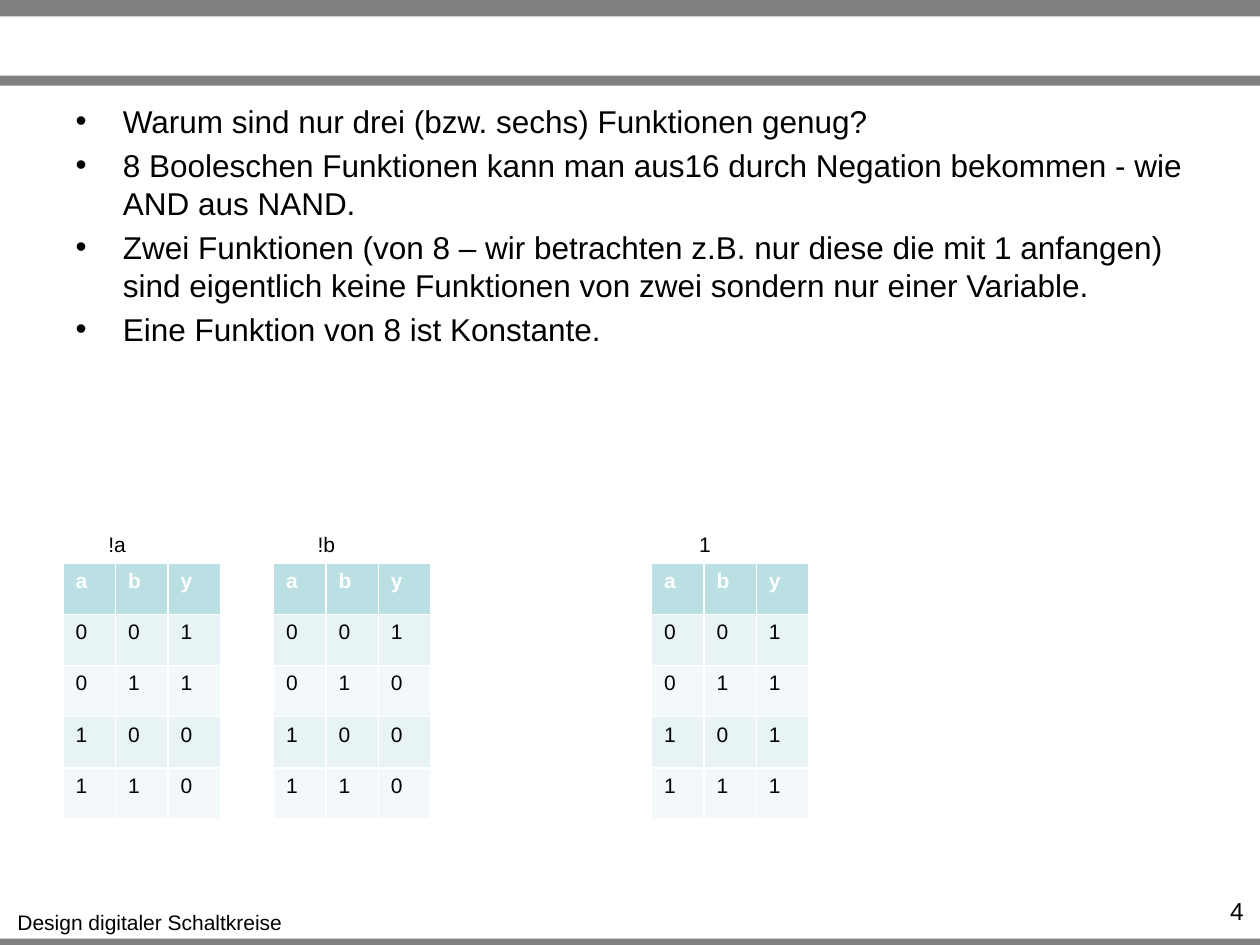
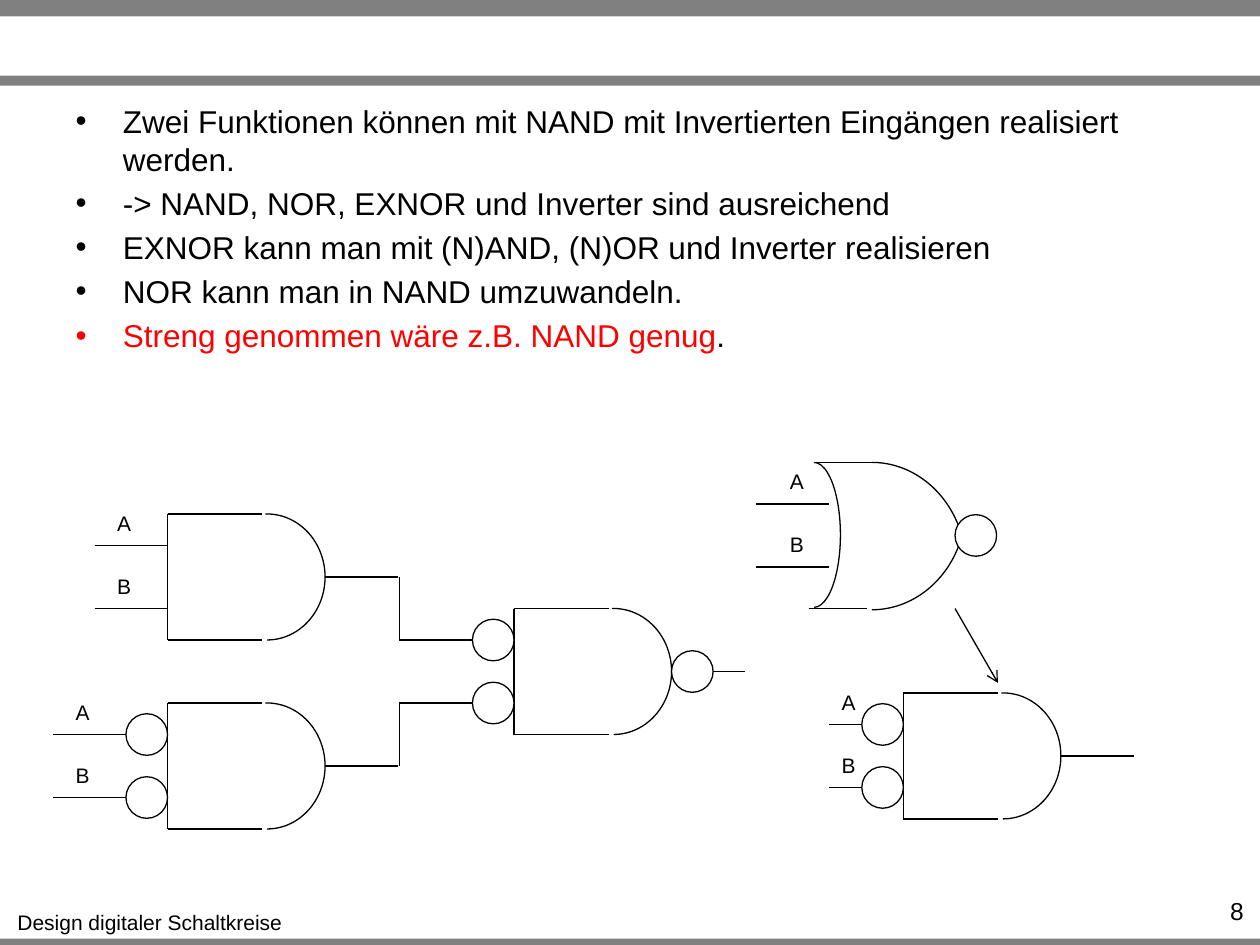
from lxml import etree
from pptx import Presentation
from pptx.dml.color import RGBColor
from pptx.enum.shapes import MSO_CONNECTOR, MSO_SHAPE
from pptx.enum.text import MSO_ANCHOR, MSO_AUTO_SIZE, PP_ALIGN
from pptx.oxml.ns import qn
from pptx.util import Inches, Pt

STRAIGHT = MSO_CONNECTOR.STRAIGHT
RECTANGLE, OVAL, ARC = MSO_SHAPE.RECTANGLE, MSO_SHAPE.OVAL, MSO_SHAPE.ARC
NO_FIT, FIT_SHAPE = MSO_AUTO_SIZE.NONE, MSO_AUTO_SIZE.SHAPE_TO_FIT_TEXT
CENTER, RIGHT = PP_ALIGN.CENTER, PP_ALIGN.RIGHT
TOP = MSO_ANCHOR.TOP

BLACK = RGBColor(0x00, 0x00, 0x00)
WHITE = RGBColor(0xFF, 0xFF, 0xFF)
GRAY = RGBColor(0x80, 0x80, 0x80)
RED = RGBColor(0xFF, 0x00, 0x00)
HEADER_FILL = RGBColor(0xBB, 0xE0, 0xE3)
ROW_FILLS = [RGBColor(0xF3, 0xF9, 0xFA), RGBColor(0xE7, 0xF3, 0xF4)]
FONT = "Arial"

# Content shared by the slides
FOOTER = "Design digitaler Schaltkreise"
BANDS = [(7.45, 0.08), (0, 0.13), (0.6, 0.08)]  # top, height

# Slide with truth tables; each bullet is a list of (text, colour) runs
TABLE_BULLETS = [
    [("Warum sind nur drei (bzw. sechs) Funktionen genug?", BLACK)],
    [("8 Booleschen Funktionen kann man aus16 durch Negation bekommen"
      " - wie AND aus NAND.", BLACK)],
    [("Zwei Funktionen (von 8 – wir betrachten z.B. nur diese die mit 1 "
      "anfangen) sind eigentlich keine Funktionen von zwei sondern nur "
      "einer Variable.", BLACK)],
    [("Eine Funktion von 8 ist Konstante.", BLACK)],
]
INPUTS = ["00", "01", "10", "11"]
# function, outputs y, table left, label left, label width
TRUTH_TABLES = [
    ("!a", "1100", 0.5, 0.76, 0.34),
    ("!b", "1000", 2.17, 2.42, 0.34),
    ("1", "1111", 5.17, 5.45, 0.29),
]

# Slide with gates
GATE_BULLETS = [
    [("Zwei Funktionen können mit NAND mit Invertierten Eingängen "
      "realisiert werden.", BLACK)],
    [("-> NAND, NOR, EXNOR und Inverter sind ausreichend", BLACK)],
    [("EXNOR kann man mit (N)AND, (N)OR und Inverter realisieren", BLACK)],
    [("NOR kann man in NAND umzuwandeln.", BLACK)],
    [("Streng genommen wäre z.B. NAND genug", RED), (".", BLACK)],
]
# left, top, start of input wires, left of A/B labels, inverted inputs, inverted output
AND_GATES = [
    (1.33, 4.08, 0.75, 0.83, False, False),
    (1.33, 5.58, 0.42, 0.5, True, False),
    (7.17, 5.5, 6.58, 6.58, True, False),
    (4.08, 4.83, 3.17, None, True, True),
]
LINKS = [(3.17, 4.58, 5.08), (3.17, 5.58, 6.08)]  # x, from y, to y
BUBBLE = 0.33
WIRE = 0.58


def add_text(slide, text, left, top, width, height, size=12, align=CENTER):
    box = slide.shapes.add_textbox(
        Inches(left), Inches(top), Inches(width), Inches(height))
    frame = box.text_frame
    frame.text = text
    frame.word_wrap = align == RIGHT
    frame.auto_size = NO_FIT if frame.word_wrap else FIT_SHAPE
    paragraph = frame.paragraphs[0]
    paragraph.alignment = align
    paragraph.font.name = FONT
    paragraph.font.size = Pt(size)
    paragraph.font.color.rgb = BLACK
    return box


def add_master_parts(prs, slide):
    """Build the bands and footer once and move them to the slide master."""
    parts = []
    for top, height in BANDS:
        band = slide.shapes.add_shape(
            RECTANGLE, 0, Inches(top), prs.slide_width, Inches(height))
        band.shadow.inherit = False
        band.fill.solid()
        band.fill.fore_color.rgb = GRAY
        band.line.fill.background()
        parts.append(band)
    parts.append(add_text(slide, FOOTER, 0.03, 7.17, 2.32, 0.3))
    for part in parts:
        prs.slide_master.shapes.element.append(part.element)


def add_slide(prs, bullets, number):
    slide = prs.slides.add_slide(prs.slide_layouts[1])
    title = slide.shapes.title.element
    title.getparent().remove(title)
    body = slide.placeholders[1]
    body.left, body.top = Inches(0.5), Inches(0.76)
    body.width, body.height = Inches(9), Inches(2.49)
    frame = body.text_frame
    frame.auto_size = NO_FIT
    for index, runs in enumerate(bullets):
        paragraph = frame.add_paragraph() if index else frame.paragraphs[0]
        if index == 0:
            paragraph.space_before = Pt(0)
        paragraph.font.name = FONT
        paragraph.font.size = Pt(18)
        for text, color in runs:
            run = paragraph.add_run()
            run.text = text
            run.font.color.rgb = color
    add_text(slide, number, 9.1, 7.06, 0.87, 0.24, 14, RIGHT)
    return slide


def add_truth_table(slide, function, outputs, left, label_left, label_width):
    rows = ["aby"] + [pair + y for pair, y in zip(INPUTS, outputs)]
    table = slide.shapes.add_table(
        len(rows), 3, Inches(left), Inches(4.47), Inches(1.25), Inches(2.03)).table
    for r, values in enumerate(rows):
        for c, value in enumerate(values):
            cell = table.cell(r, c)
            cell.text = value
            cell.vertical_anchor = TOP
            cell.fill.solid()
            cell.fill.fore_color.rgb = ROW_FILLS[r % 2] if r else HEADER_FILL
            font = cell.text_frame.paragraphs[0].font
            font.name, font.size, font.bold = FONT, Pt(12), r == 0
            font.color.rgb = BLACK if r else WHITE
    add_text(slide, function, label_left, 4.17, label_width, 0.3)


def add_line(slide, x1, y1, x2, y2, arrow=False):
    line = slide.shapes.add_connector(
        STRAIGHT, Inches(x1), Inches(y1), Inches(x2), Inches(y2))
    line.line.color.rgb = BLACK
    line.line.width = Pt(0.75)
    properties = line.element.spPr
    if arrow:
        etree.SubElement(properties.find(qn("a:ln")), qn("a:tailEnd"), type="arrow")
    etree.SubElement(properties, qn("a:effectLst"))


def add_outline(slide, kind, left, top, width, height):
    outline = slide.shapes.add_shape(
        kind, Inches(left), Inches(top), Inches(width), Inches(height))
    outline.shadow.inherit = False
    outline.line.color.rgb = BLACK
    outline.line.width = Pt(0.75)
    return outline


def add_arc(slide, left, top, width, height, end, flip=False):
    """Draw an arc from twelve o'clock to the angle end, in degrees."""
    arc = add_outline(slide, ARC, left, top, width, height)
    arc.fill.background()
    arc.adjustments[0] = 270 * 0.6
    arc.adjustments[1] = end * 0.6
    if flip:
        arc.element.spPr.find(qn("a:xfrm")).set("flipV", "1")


def add_bubble(slide, left, middle):
    bubble = add_outline(slide, OVAL, left, middle - BUBBLE / 2, BUBBLE, BUBBLE)
    bubble.fill.solid()
    bubble.fill.fore_color.rgb = WHITE


def add_inputs(slide, start, end, first, label_left, inverted=False):
    for name, y in (("A", first), ("B", first + 0.5)):
        add_line(slide, start, y, end, y)
        if inverted:
            add_bubble(slide, end - BUBBLE, y)
        if label_left is not None:
            add_text(slide, name, label_left, y - 0.33, 0.31, 0.3)


def add_and_gate(slide, left, top, wire_start, label_left, inverted_in, inverted_out):
    add_line(slide, left, top, left, top + 1)
    for y in (top, top + 1):
        add_line(slide, left, y, left + 0.75, y)
    add_arc(slide, left + 0.33, top, 0.92, 1, 91.5, flip=True)
    add_inputs(slide, wire_start, left, top + 0.25, label_left, inverted_in)
    output, middle = left + 1.25, top + 0.5
    add_line(slide, output, middle, output + WIRE, middle)
    if inverted_out:
        add_bubble(slide, output, middle)


def add_nor_gate(slide):
    add_inputs(slide, 6, 6.58, 4, 6.17)
    add_arc(slide, 6.25, 3.67, 0.42, 1.15, 89.8)
    add_arc(slide, 6.17, 3.67, 1.5, 1.67, 336.14)
    add_arc(slide, 6.17, 3.17, 1.5, 1.67, 336.14, flip=True)
    add_line(slide, 6.92, 3.67, 6.46, 3.67)
    add_line(slide, 6.88, 4.83, 6.42, 4.83)
    add_bubble(slide, 7.58, 4.25)


def main():
    prs = Presentation()
    prs.slide_width, prs.slide_height = Inches(10), Inches(7.5)

    # Truth tables
    tables = add_slide(prs, TABLE_BULLETS, "4")
    add_master_parts(prs, tables)
    for truth_table in TRUTH_TABLES:
        add_truth_table(tables, *truth_table)

    # Gates
    gates = add_slide(prs, GATE_BULLETS, "8")
    for gate in AND_GATES:
        add_and_gate(gates, *gate)
    for x, y1, y2 in LINKS:
        add_line(gates, x, y1, x, y2)
    add_nor_gate(gates)
    add_line(gates, 7.58, 4.83, 7.92, 5.42, arrow=True)

    prs.save("out.pptx")


if __name__ == "__main__":
    main()
